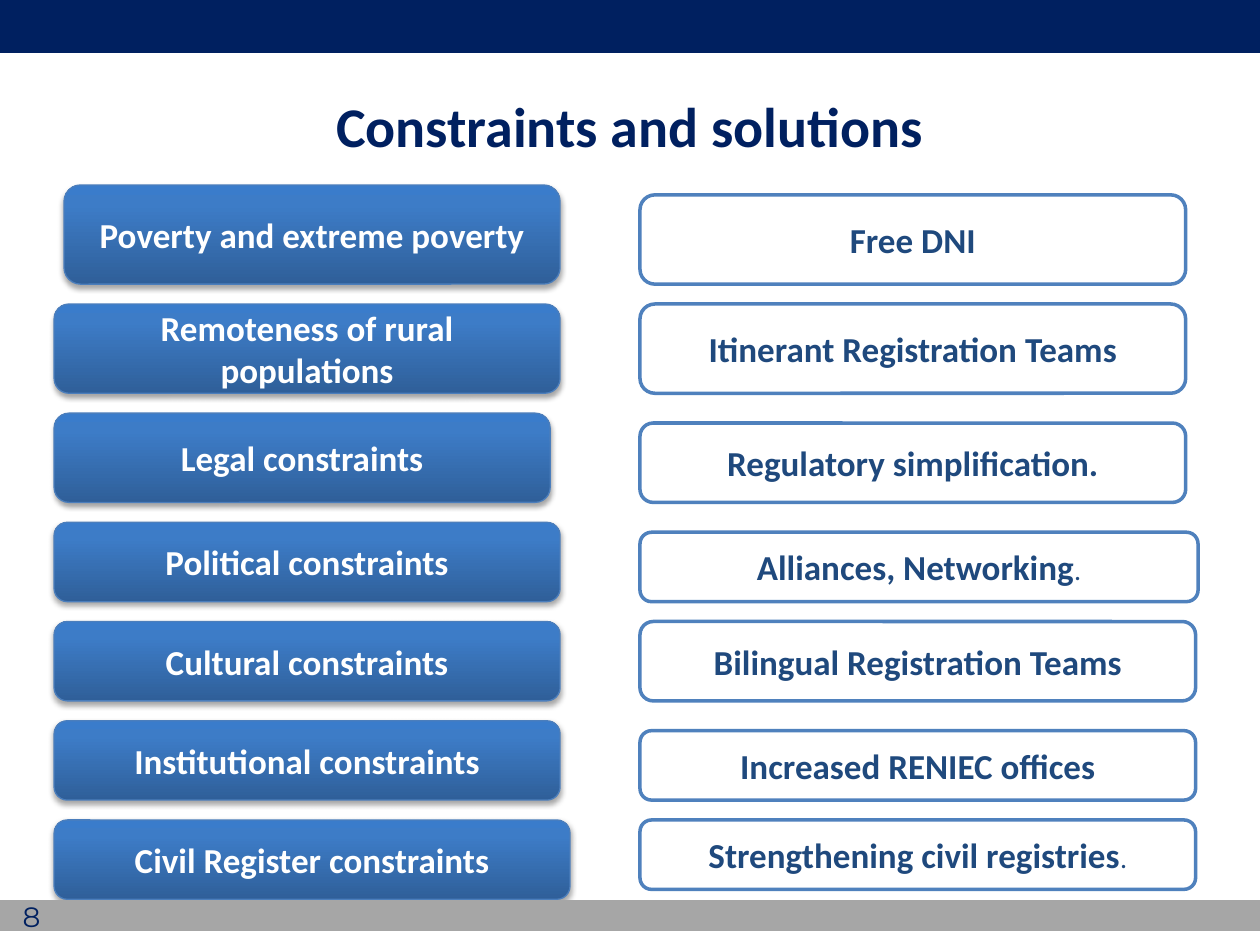
from lxml.etree import SubElement
from pptx import Presentation
from pptx.dml.color import RGBColor
from pptx.enum.shapes import MSO_SHAPE
from pptx.enum.text import MSO_ANCHOR, PP_ALIGN
from pptx.oxml import parse_xml
from pptx.oxml.ns import nsdecls, qn
from pptx.util import Pt

TITLE = "Constraints and solutions"
PAGE_NUMBER = "8"
NAVY, GRAY, WHITE = "002060", "A6A6A6", "FFFFFF"
EDGE, SOLUTION_EDGE, SOLUTION_TEXT = "4B7EBC", "4F81BD", "1F497D"
GRADIENT = [(0, "2F5F99"), (80, "3D7CC7"), (100, "3A7CCB")]

# Sizes are in grid units: (text, indent, width, height), then
# (text, light ending, width, height)
ROWS = [
    (("Poverty and extreme poverty", 1, 50, 10), ("Free DNI", "", 55, 9)),
    (("Remoteness of rural populations", 0, 51, 9), ("Itinerant Registration Teams", "", 55, 9)),
    (("Legal constraints", 0, 50, 9), ("Regulatory simplification.", "", 55, 8)),
    (("Political constraints", 0, 51, 8), ("Alliances, Networking", ".", 56.25, 7)),
    (("Cultural constraints", 0, 51, 8), ("Bilingual Registration Teams", "", 56, 8)),
    (("Institutional constraints", 0, 51, 8), ("Increased RENIEC offices", "", 56, 7)),
    (("Civil Register constraints", 0, 52, 8), ("Strengthening civil registries", ".", 56, 7)),
]
UNIT = 5.67
GAP = 2 * UNIT
CONSTRAINT_LEFT, SOLUTION_LEFT, FIRST_TOP = 30.9, 365.7, 105.7

prs = Presentation()
prs.slide_width, prs.slide_height = Pt(720), Pt(540)
slide = prs.slides.add_slide(prs.slide_layouts[6])


def rgb(color):
    return RGBColor.from_string(color)


def add_box(kind, left, top, width, height, fill, edge, edge_width):
    box = slide.shapes.add_shape(kind, Pt(left), Pt(top), Pt(width), Pt(height))
    box.shadow.inherit = False
    box.fill.solid()
    box.fill.fore_color.rgb = rgb(fill)
    box.line.color.rgb = rgb(edge)
    box.line.width = Pt(edge_width)
    return box


def write(shape, text, size, color, bold=True, align=PP_ALIGN.CENTER,
          anchor=MSO_ANCHOR.MIDDLE, font="Calibri"):
    frame = shape.text_frame
    frame.word_wrap = True
    frame.vertical_anchor = anchor
    paragraph = frame.paragraphs[0]
    paragraph.alignment = align
    paragraph.add_run().text = text
    paragraph.font.name = font
    paragraph.font.size = Pt(size)
    paragraph.font.bold = bold
    paragraph.font.color.rgb = rgb(color)
    return paragraph


def add_text(left, top, width, height, *args, **kwargs):
    label = slide.shapes.add_textbox(Pt(left), Pt(top), Pt(width), Pt(height))
    write(label, *args, **kwargs)


def add_gradient_and_shadow(box):
    stops = "".join(f'<a:gs pos="{pos * 1000}"><a:srgbClr val="{color}"/></a:gs>'
                    for pos, color in GRADIENT)
    gradient = parse_xml(f'<a:gradFill {nsdecls("a")} rotWithShape="1"><a:gsLst>{stops}</a:gsLst>'
                         '<a:lin ang="16200000" scaled="0"/></a:gradFill>')
    properties = box.element.spPr
    properties.replace(properties.find(qn("a:solidFill")), gradient)
    shadow = SubElement(properties.find(qn("a:effectLst")), qn("a:outerShdw"),
                        blurRad=str(Pt(3.1)), dist=str(Pt(1.8)), dir="5400000", rotWithShape="0")
    color = SubElement(shadow, qn("a:srgbClr"), val="000000")
    SubElement(color, qn("a:alpha"), val="35000")


# Header band and title
add_box(MSO_SHAPE.RECTANGLE, 0, 0, 720, 29.5, NAVY, NAVY, 2)
add_text(8.6, 49, 702.7, 46, TITLE, 32, NAVY, anchor=MSO_ANCHOR.TOP)

# Constraints stacked on the left, each with its solution on the right
top = FIRST_TOP
for row, (constraint, solution) in enumerate(ROWS):
    text, indent, width, units = constraint
    height = units * UNIT
    box = add_box(MSO_SHAPE.ROUNDED_RECTANGLE, CONSTRAINT_LEFT + indent * UNIT, top,
                  width * UNIT, height, GRADIENT[1][1], EDGE, 0.75)
    add_gradient_and_shadow(box)
    write(box, text, 20, WHITE)

    text, ending, width, units = solution
    # Solutions share the row's bottom edge; the last one shares its top
    last = row == len(ROWS) - 1
    solution_top = top if last else top + height - units * UNIT
    box = add_box(MSO_SHAPE.ROUNDED_RECTANGLE, SOLUTION_LEFT, solution_top,
                  width * UNIT, units * UNIT, WHITE, SOLUTION_EDGE, 2)
    paragraph = write(box, text, 20, SOLUTION_TEXT)
    if ending:
        run = paragraph.add_run()
        run.text = ending
        run.font.size = Pt(16)
        run.font.bold = False
    top += height + GAP

# Footer band and page number
add_box(MSO_SHAPE.RECTANGLE, 0, 515.5, 720, 15.8, GRAY, GRAY, 2)
add_text(0, 509, 30.2, 28.8, PAGE_NUMBER, 16, NAVY, bold=False,
         align=PP_ALIGN.RIGHT, font="Montserrat")

prs.save("out.pptx")
